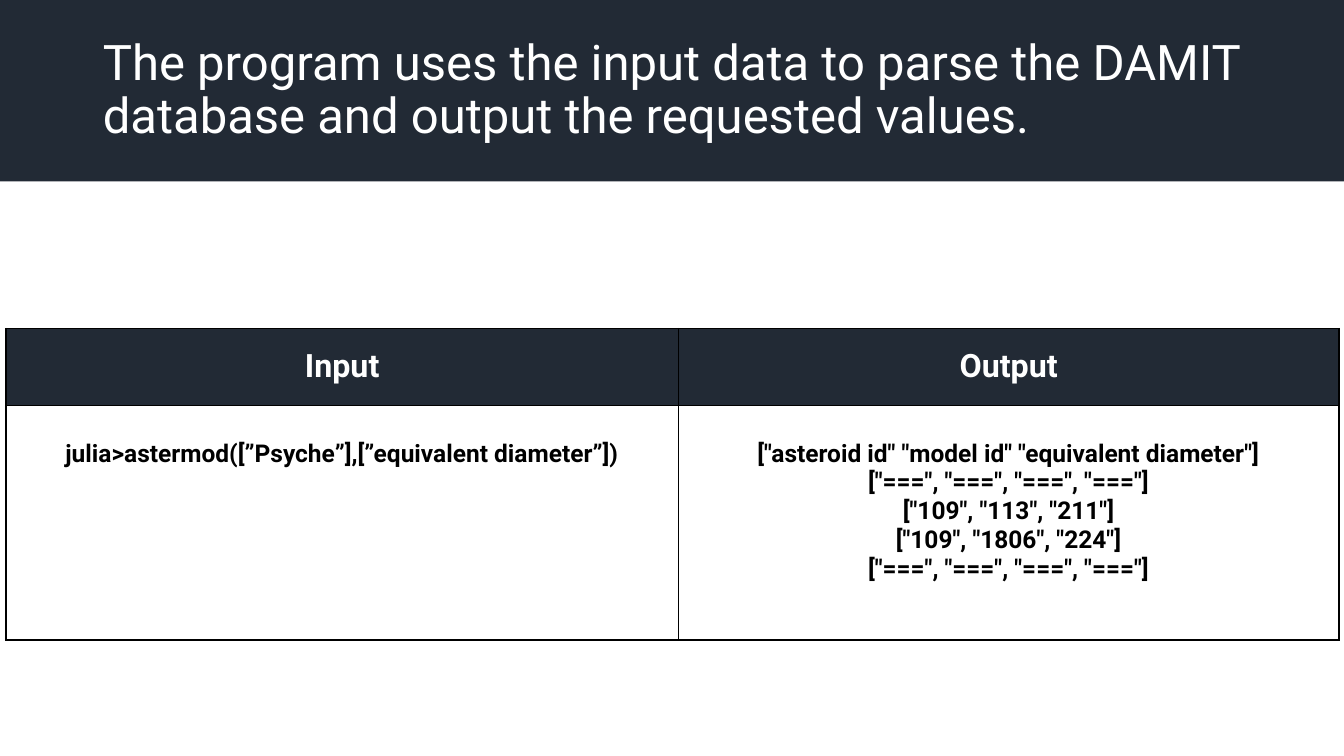
from lxml.etree import SubElement
from pptx import Presentation
from pptx.dml.color import RGBColor
from pptx.enum.shapes import MSO_SHAPE
from pptx.enum.text import MSO_ANCHOR, PP_ALIGN
from pptx.oxml.ns import qn
from pptx.util import Inches, Pt

TITLE = ("The program uses the input data to parse the DAMIT database "
         "and output the requested values.")
HEADERS = ["Input", "Output"]
INPUT_LINES = ['julia>astermod([”Psyche”],[”equivalent diameter”])']
OUTPUT_LINES = [
    '["asteroid id" "model id" "equivalent diameter"]',
    '["===", "===", "===", "==="]',
    '["109", "113", "211"]',
    '["109", "1806", "224"]',
    '["===", "===", "===", "==="]',
]
ROWS = [HEADERS, ["\n".join(INPUT_LINES), "\n".join(OUTPUT_LINES)]]
COL_WIDTHS = [6.67, 6.55]
ROW_HEIGHTS = [0.76, 2.33]
FONT, NAVY, WHITE, BLACK = "Roboto", "222A35", "FFFFFF", "000000"


def color(value):
    return RGBColor.from_string(value)


def style_text(tf, size, ink, bold=False, align=None):
    for p in tf.paragraphs:
        p.alignment = align
        for r in p.runs:
            r.font.name = FONT
            r.font.size = Pt(size)
            r.font.bold = bold
            r.font.color.rgb = color(ink)


def add_borders(cell):
    """Draw a 1 pt black line on each side of the cell."""
    tc_pr = cell._tc.get_or_add_tcPr()
    for i, side in enumerate(("lnL", "lnR", "lnT", "lnB")):
        ln = tc_pr.makeelement(qn(f"a:{side}"), {"w": str(Pt(1))})
        fill = SubElement(ln, qn("a:solidFill"))
        SubElement(fill, qn("a:srgbClr"), val=BLACK)
        tc_pr.insert(i, ln)  # borders precede the cell fill


def add_band_and_title(slide):
    band = slide.shapes.add_shape(MSO_SHAPE.RECTANGLE, 0, Inches(-0.03),
                                  Inches(13.33), Inches(1.83))
    band.shadow.inherit = False
    band.fill.solid()
    band.fill.fore_color.rgb = color(NAVY)
    band.line.fill.background()

    title = slide.shapes.title
    band._element.addnext(title._element)  # title in front of the band
    title.left, title.top = Inches(0.92), Inches(0.18)
    title.width, title.height = Inches(11.5), Inches(1.45)
    tf = title.text_frame
    tf.text = TITLE
    tf.word_wrap = True
    tf.vertical_anchor = MSO_ANCHOR.MIDDLE
    tf.paragraphs[0].line_spacing = 0.9
    style_text(tf, 35, WHITE, align=PP_ALIGN.LEFT)


def add_io_table(slide):
    table = slide.shapes.add_table(
        len(ROWS), len(HEADERS), Inches(0.06), Inches(3.26),
        Inches(sum(COL_WIDTHS)), Inches(sum(ROW_HEIGHTS))).table
    for column, width in zip(table.columns, COL_WIDTHS):
        column.width = Inches(width)
    for row, height in zip(table.rows, ROW_HEIGHTS):
        row.height = Inches(height)
    for i, row in enumerate(ROWS):
        header = i == 0
        for j, text in enumerate(row):
            cell = table.cell(i, j)
            cell.fill.solid()
            cell.fill.fore_color.rgb = color(NAVY if header else WHITE)
            add_borders(cell)
            cell.text_frame.text = text
            if header:
                cell.vertical_anchor = MSO_ANCHOR.MIDDLE
            else:
                cell.vertical_anchor = MSO_ANCHOR.TOP
                cell.margin_top = Inches(0.34)
            style_text(cell.text_frame, 23 if header else 17.5,
                       WHITE if header else BLACK, True, PP_ALIGN.CENTER)


def main():
    prs = Presentation()
    prs.slide_width, prs.slide_height = Inches(13.33), Inches(7.5)
    slide = prs.slides.add_slide(prs.slide_layouts[5])
    add_band_and_title(slide)
    add_io_table(slide)
    prs.save("out.pptx")


if __name__ == "__main__":
    main()
